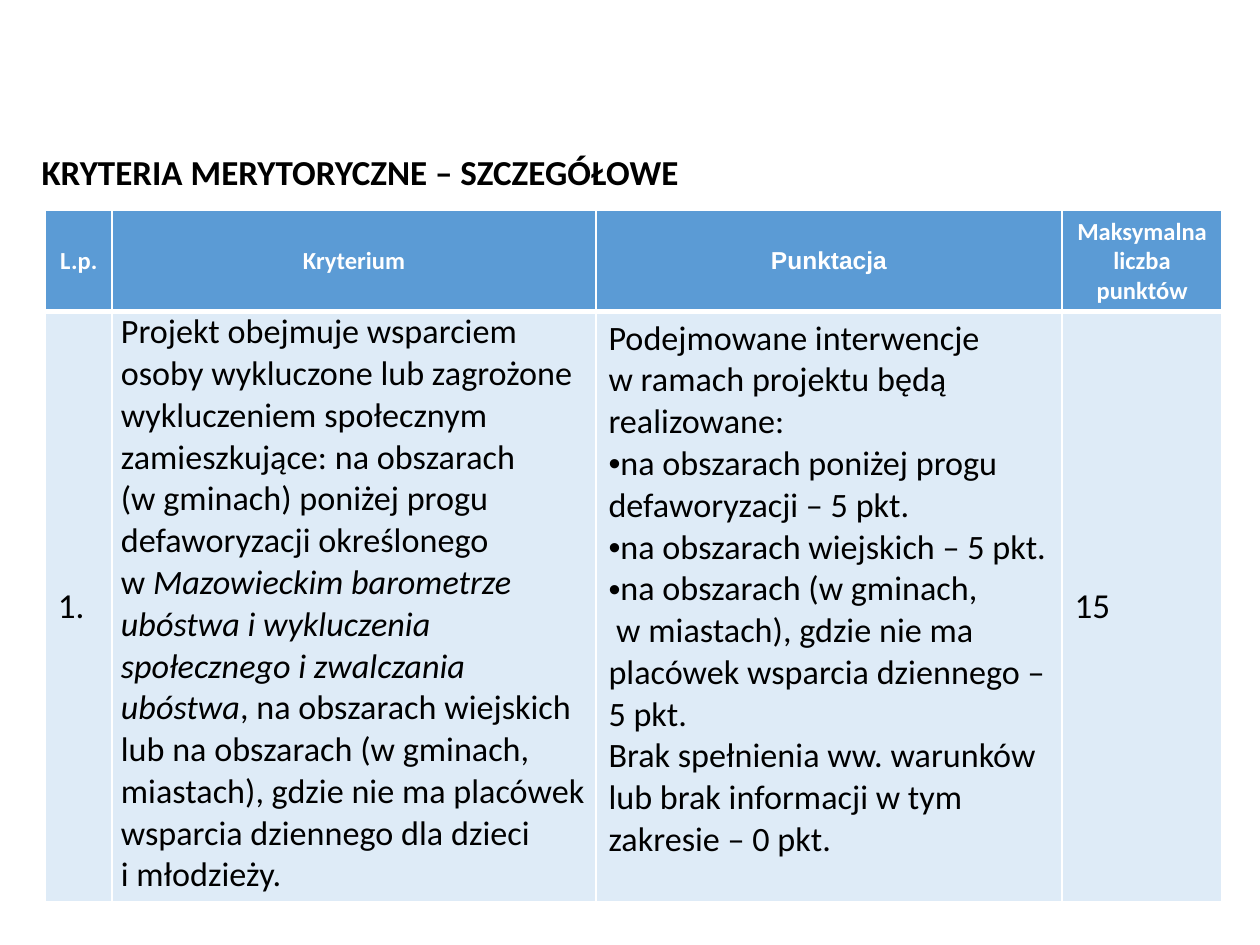
from dataclasses import dataclass

from lxml import etree
from pptx import Presentation, util as u
from pptx.dml.color import RGBColor
from pptx.enum import text
from pptx.oxml.ns import qn


@dataclass(frozen=True)
class Theme:
    """Colours, fonts and type sizes of the slide."""
    header: RGBColor = RGBColor(0x5B, 0x9B, 0xD5)
    band: RGBColor = RGBColor(0xDE, 0xEB, 0xF7)
    white: RGBColor = RGBColor(0xFF, 0xFF, 0xFF)
    black: RGBColor = RGBColor(0, 0, 0)
    font: str = "Calibri"
    alternate_font: str = "Arial"
    title_size: float = 20
    header_size: float = 14
    number_size: float = 20
    body_size: float = 19.5
    thin: float = 1
    thick: float = 3


THEME = Theme()
WIDTH, HEIGHT = u.Inches(10), u.Inches(7.5)
COLUMNS = (0.53, 3.84, 3.7, 1.27)
ROWS = (0.8, 4.69)
HEADINGS = ("L.p.", "Kryterium", "Punktacja", "Maksymalna liczba punktów")
CRITERION = (
    ("Projekt obejmuje wsparciem osoby wykluczone lub zagrożone wykluczeniem "
     "społecznym zamieszkujące: na obszarach \n(w gminach) poniżej progu "
     "defaworyzacji określonego \nw ", False),
    ("Mazowieckim barometrze ubóstwa i wykluczenia społecznego i zwalczania "
     "ubóstwa", True),
    (", na obszarach wiejskich lub na obszarach (w gminach, miastach), gdzie "
     "nie ma placówek wsparcia dziennego dla dzieci \ni młodzieży.", False),
)
SCORING = (
    ("Podejmowane interwencje \nw ramach projektu będą realizowane:", False),
    ("na obszarach poniżej progu defaworyzacji – 5 pkt.", True),
    ("na obszarach wiejskich – 5 pkt.", True),
    ("na obszarach (w gminach,\n w miastach), gdzie nie ma placówek wsparcia "
     "dziennego – 5 pkt.", True),
    ("Brak spełnienia ww. warunków lub brak informacji w tym zakresie – 0 pkt.",
     False),
)


def apply(target, values):
    """Set each named attribute on the target."""
    for name, value in values.items():
        setattr(target, name, value)


def write(paragraph, words, size, color=THEME.black, **style):
    """Append formatted words, turning newlines into line breaks."""
    for index, line in enumerate(words.split("\n")):
        if index:
            paragraph.add_line_break()
        run = paragraph.add_run()
        run.text = line
        apply(run.font, {"name": THEME.font, "size": u.Pt(size),
                         "bold": False, "italic": False, **style})
        run.font.color.rgb = color


def add_bullet(paragraph):
    """Give a paragraph a round bullet that sits against its text."""
    properties = paragraph._p.get_or_add_pPr()
    properties.set("marL", "0")
    properties.set("indent", str(-u.Inches(0.38)))
    etree.SubElement(properties, qn("a:buFont")).set("typeface", THEME.alternate_font)
    etree.SubElement(properties, qn("a:buChar")).set("char", "•")


def style_cell(cell, fill, top, bottom):
    """Fill a cell and draw its four white borders."""
    cell.fill.solid()
    cell.fill.fore_color.rgb = fill
    properties = cell._tc.get_or_add_tcPr()
    widths = {"a:lnL": THEME.thin, "a:lnR": THEME.thin, "a:lnT": top, "a:lnB": bottom}
    for position, (side, width) in enumerate(widths.items()):
        line = etree.Element(qn(side), w=str(u.Pt(width)))
        paint = etree.SubElement(line, qn("a:solidFill"))
        etree.SubElement(paint, qn("a:srgbClr")).set("val", str(THEME.white))
        properties.insert(position, line)


def add_title(slide, words):
    """Place the heading in the title placeholder."""
    heading = slide.shapes.title
    apply(heading, {"left": u.Inches(0.23), "top": u.Inches(1.14),
                    "width": u.Inches(5.42), "height": u.Inches(0.44)})
    apply(heading.text_frame, {"word_wrap": False,
                               "vertical_anchor": text.MSO_ANCHOR.MIDDLE,
                               "auto_size": text.MSO_AUTO_SIZE.SHAPE_TO_FIT_TEXT})
    paragraph = heading.text_frame.paragraphs[0]
    paragraph.alignment = text.PP_ALIGN.LEFT
    write(paragraph, words, THEME.title_size, bold=True)


def add_grid(slide):
    """Add the criteria table with sized and styled cells."""
    grid = slide.shapes.add_table(
        len(ROWS), len(COLUMNS), u.Inches(0.36), u.Inches(1.67),
        u.Inches(sum(COLUMNS)), u.Inches(sum(ROWS))).table
    for column, width in zip(grid.columns, COLUMNS):
        column.width = u.Inches(width)
    for row, height in zip(grid.rows, ROWS):
        row.height = u.Inches(height)
    bands = ((THEME.header, THEME.thin, THEME.thick),
             (THEME.band, THEME.thick, THEME.thin))
    for row, band in zip(grid.rows, bands):
        for cell in row.cells:
            style_cell(cell, *band)
    return grid


def fill_headings(cells):
    """Write the centred column headings."""
    for cell, words in zip(cells, HEADINGS):
        cell.vertical_anchor = text.MSO_ANCHOR.MIDDLE
        paragraph = cell.text_frame.paragraphs[0]
        paragraph.alignment = text.PP_ALIGN.CENTER
        font = THEME.alternate_font if words == "Punktacja" else THEME.font
        write(paragraph, words, THEME.header_size, THEME.white, bold=True, name=font)


def fill_criterion(cells):
    """Write the number, description, scoring and maximum of the criterion."""
    number, description, scoring, maximum = cells
    for cell, words in ((number, "1."), (maximum, "15")):
        cell.vertical_anchor = text.MSO_ANCHOR.MIDDLE
        write(cell.text_frame.paragraphs[0], words, THEME.number_size)
    apply(description, {"margin_left": u.Inches(0.07), "margin_right": u.Inches(0.07),
                        "margin_top": 0, "margin_bottom": 0})
    for words, italic in CRITERION:
        write(description.text_frame.paragraphs[0], words, THEME.body_size, italic=italic)
    for index, (words, bulleted) in enumerate(SCORING):
        frame = scoring.text_frame
        paragraph = frame.add_paragraph() if index else frame.paragraphs[0]
        if bulleted:
            add_bullet(paragraph)
        write(paragraph, words, THEME.body_size)


def main():
    """Build and save the slide."""
    deck = Presentation()
    apply(deck, {"slide_width": WIDTH, "slide_height": HEIGHT})
    slide = deck.slides.add_slide(deck.slide_layouts.get_by_name("Title Only"))
    grid = add_grid(slide)
    fill_headings(grid.rows[0].cells)
    fill_criterion(grid.rows[1].cells)
    add_title(slide, "KRYTERIA MERYTORYCZNE – SZCZEGÓŁOWE")
    deck.save("out.pptx")


if __name__ == "__main__":
    main()
